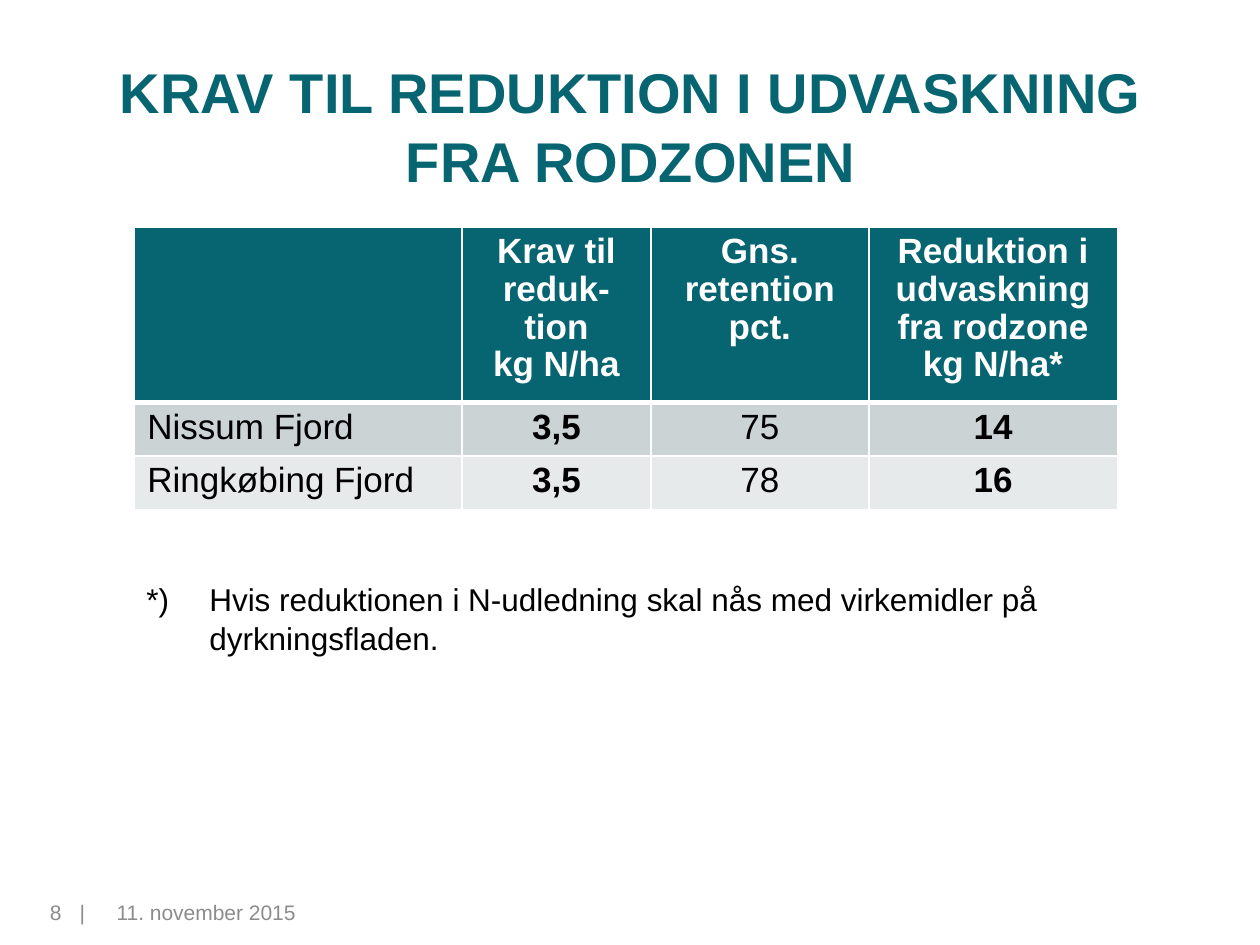
from pptx import Presentation
from pptx.dml.color import RGBColor
from pptx.enum.text import MSO_ANCHOR, PP_ALIGN
from pptx.oxml.ns import qn
from pptx.util import Pt
from lxml.etree import SubElement

THEME = {
    "font": "Arial",
    "teal": "076471", "white": "FFFFFF", "black": "000000", "gray": "8C8C8C",
    "bands": ("CCD3D5", "E7EAEB"),
    "title": 32, "cell": 20, "note": 18, "foot": 12,
}

TITLE = "KRAV TIL REDUKTION I UDVASKNING\vFRA RODZONEN"
HEAD = ("", "Krav til reduk-tion\vkg N/ha", "Gns. retention\vpct.",
        "Reduktion i udvaskning fra rodzone\nkg N/ha*")
ROWS = (
    ("Nissum Fjord", "3,5", "75", "14"),
    ("Ringkøbing Fjord", "3,5", "78", "16"),
)
NOTE = "*)\tHvis reduktionen i N-udledning skal nås med virkemidler på dyrkningsfladen."
DATE = "11. november 2015"
PAGE = "8\t|"

WIDTHS = (187, 108, 124.5, 142)
HEIGHTS = (96, 29, 29)
BOLD = (False, True, False, True)


def write(frame, text, size, color, bold=False, align=PP_ALIGN.LEFT,
          space=None, hang=0, tab=0):
    frame.word_wrap = True
    frame.text = text
    for para in frame.paragraphs:
        para.alignment = align
        if space:
            para.line_spacing = space
        props = para._p.get_or_add_pPr()
        if hang:
            props.set("marL", str(Pt(hang)))
            props.set("indent", str(-Pt(hang)))
        if tab:
            stops = SubElement(props, qn("a:tabLst"))
            SubElement(stops, qn("a:tab"), pos=str(Pt(tab)), algn="l")
        for font in [para.font] + [run.font for run in para.runs]:
            font.name = THEME["font"]
            font.size = Pt(size)
            font.bold = bold
            font.color.rgb = RGBColor.from_string(color)


def add_box(slide, left, top, width, height):
    spot = [Pt(n) for n in (left, top, width, height)]
    return slide.shapes.add_textbox(*spot).text_frame


def edge(cell, low):
    props = cell._tc.get_or_add_tcPr()
    for spot, (side, width) in enumerate(
            (("L", 1), ("R", 1), ("T", 1), ("B", low))):
        line = props.makeelement(qn("a:ln" + side), {"w": str(Pt(width))})
        fill = SubElement(line, qn("a:solidFill"))
        SubElement(fill, qn("a:srgbClr"), val=THEME["white"])
        props.insert(spot, line)


def add_grid(slide):
    size = [Pt(n) for n in (77, 129.6, sum(WIDTHS), sum(HEIGHTS))]
    grid = slide.shapes.add_table(len(HEIGHTS), len(WIDTHS), *size).table
    grid.first_row = grid.horz_banding = False
    for col, width in zip(grid.columns, WIDTHS):
        col.width = Pt(width)
    for row, height in zip(grid.rows, HEIGHTS):
        row.height = Pt(height)
    for r, texts in enumerate((HEAD, *ROWS)):
        head = r == 0
        fill = THEME["teal"] if head else THEME["bands"][(r - 1) % 2]
        for c, text in enumerate(texts):
            cell = grid.cell(r, c)
            cell.fill.solid()
            cell.fill.fore_color.rgb = RGBColor.from_string(fill)
            edge(cell, 3 if head else 1)
            write(cell.text_frame, text, THEME["cell"],
                  THEME["white" if head else "black"],
                  bold=head or BOLD[c], space=0.97,
                  align=PP_ALIGN.CENTER if c else PP_ALIGN.LEFT)


def main():
    deck = Presentation()
    deck.slide_width, deck.slide_height = Pt(720), Pt(540)
    slide = deck.slides.add_slide(deck.slide_layouts[6])

    title = add_box(slide, 14.4, 26, 692, 90)
    title.vertical_anchor = MSO_ANCHOR.MIDDLE
    write(title, TITLE, THEME["title"], THEME["teal"], bold=True,
          align=PP_ALIGN.CENTER, space=1.04)

    add_grid(slide)
    write(add_box(slide, 76.5, 327, 533.5, 51), NOTE, THEME["note"],
          THEME["black"], space=1.04, hang=36)

    write(add_box(slide, 59.5, 510.5, 168, 29), DATE, THEME["foot"],
          THEME["gray"])
    page = add_box(slide, 0, 510.5, 56, 29)
    page.margin_left, page.margin_right = Pt(28.5), 0
    write(page, PAGE, THEME["foot"], THEME["gray"], tab=17)

    deck.save("out.pptx")


if __name__ == "__main__":
    main()
